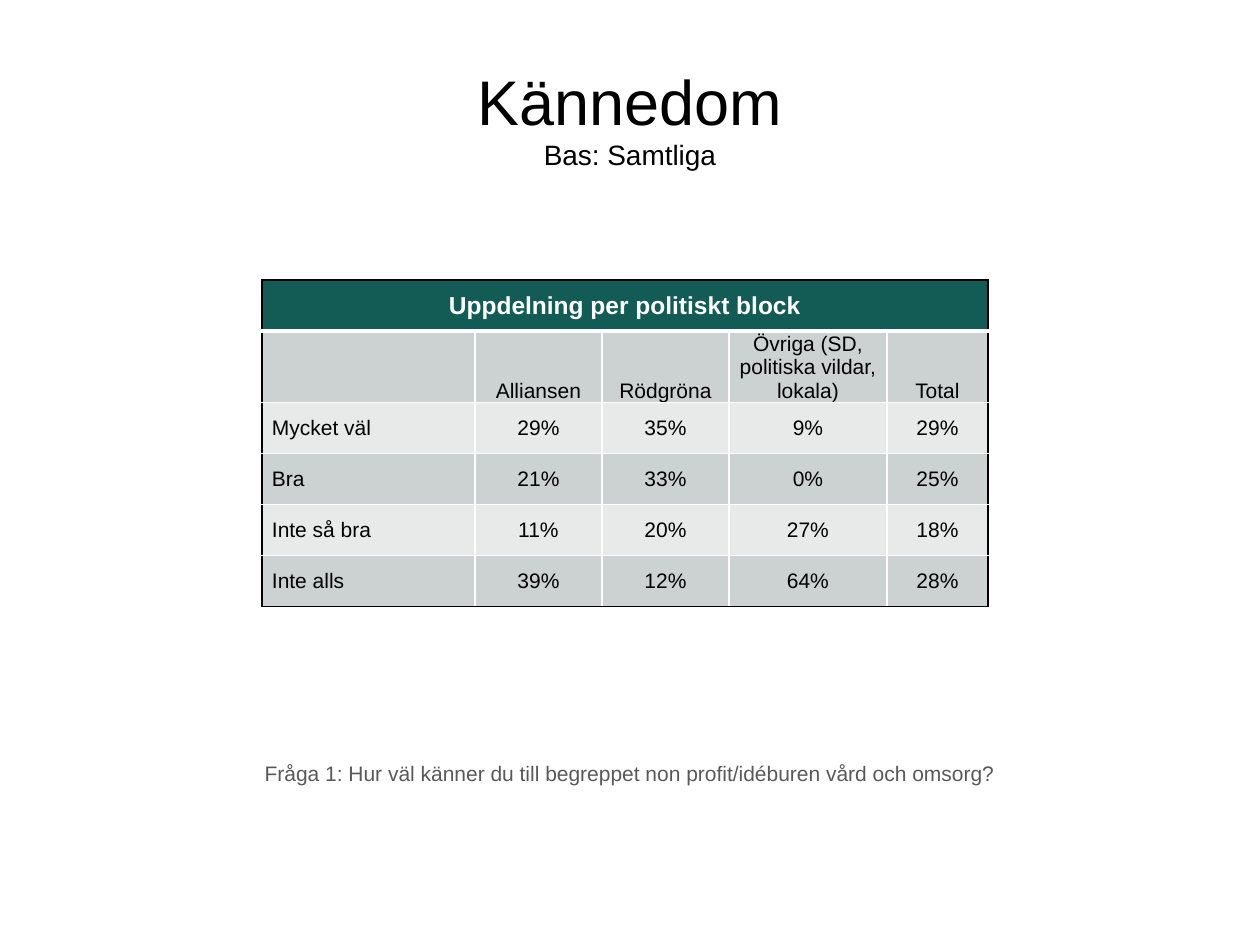
from copy import deepcopy
from dataclasses import dataclass

from lxml.etree import SubElement
from pptx import Presentation
from pptx.dml.color import RGBColor
from pptx.enum.text import MSO_ANCHOR as Anchor, PP_ALIGN as Align
from pptx.oxml.ns import qn
from pptx.util import Emu, Pt

DPI = 126


@dataclass(frozen=True)
class Theme:
    font: str = "Arial"
    black: str = "000000"
    white: str = "FFFFFF"
    grey: str = "595959"
    green: str = "135C55"
    dark: str = "CCD2D1"
    light: str = "E7EAE9"
    title: int = 36
    base: int = 16
    head: int = 14
    body: int = 12


T = Theme()
COLS = [213, 127, 127, 158, 101]
ROW = 51
HEAD = "Uppdelning per politiskt block"
ROWS = [
    ["", "Alliansen", "Rödgröna", "Övriga (SD, politiska vildar, lokala)", "Total"],
    ["Mycket väl", "29%", "35%", "9%", "29%"],
    ["Bra", "21%", "33%", "0%", "25%"],
    ["Inte så bra", "11%", "20%", "27%", "18%"],
    ["Inte alls", "39%", "12%", "64%", "28%"],
]


def px(n):
    return Emu(round(n * 914400 / DPI))


def rgb(code):
    return RGBColor.from_string(code)


def put(frame, text, size=T.body, color=T.black, bold=False, align=Align.CENTER):
    """Add a run to the first paragraph of a frame."""
    para = frame.paragraphs[0]
    para.alignment = align
    run = para.add_run()
    run.text = text
    font = run.font
    font.name, font.size, font.bold = T.font, Pt(size), bold
    font.color.rgb = rgb(color)
    return run


def place(shape, box):
    shape.left, shape.top, shape.width, shape.height = map(px, box)


def edge(cell, sides):
    """Draw cell borders from (tag, colour, width) triples, in schema order."""
    props = cell._tc.get_or_add_tcPr()
    for i, (tag, color, width) in enumerate(sides):
        line = SubElement(props, qn(f"a:{tag}"), w=str(Pt(width)))
        fill = SubElement(line, qn("a:solidFill"))
        SubElement(fill, qn("a:srgbClr"), val=color)
        props.insert(i, line)


def add_title(slide, box):
    shape = slide.shapes.title
    place(shape, box)
    frame = shape.text_frame
    frame.vertical_anchor = Anchor.MIDDLE
    run = put(frame, "Kännedom", size=T.title)
    para = frame.paragraphs[0]
    para.add_line_break()
    para._p[-1].append(deepcopy(run._r.rPr))
    put(frame, "Bas: Samtliga", size=T.base)


def style(cell, row, col):
    """Set the fill and borders that follow from a cell's place in the grid."""
    cell.fill.solid()
    band = T.dark if row % 2 else T.light
    cell.fill.fore_color.rgb = rgb(band if row else T.green)
    first, last = col == 0, col == len(COLS) - 1
    end = row == len(ROWS)
    edge(cell, [
        ("lnL", T.black if first else T.white, 1),
        ("lnR", T.black if last or row == 0 else T.white, 1),
        ("lnT", T.white if row else T.black, 3 if row == 1 else 1),
        ("lnB", T.black if end else T.white, 1 if row else 3),
    ])


def add_grid(slide, box):
    count = len(ROWS) + 1
    table = slide.shapes.add_table(count, len(COLS), *map(px, box)).table
    table.first_row = table.horz_banding = False
    for col, width in zip(table.columns, COLS):
        col.width = px(width)
    for row in table.rows:
        row.height = px(ROW)
    for r in range(count):
        for c in range(len(COLS)):
            style(table.cell(r, c), r, c)

    head = table.cell(0, 0)
    head.merge(table.cell(0, len(COLS) - 1))
    head.vertical_anchor = Anchor.MIDDLE
    put(head.text_frame, HEAD, size=T.head, color=T.white, bold=True)

    for r, line in enumerate(ROWS, 1):
        for c, text in enumerate(line):
            if not text:
                continue
            cell = table.cell(r, c)
            cell.vertical_anchor = Anchor.BOTTOM if r == 1 else Anchor.MIDDLE
            cell.margin_left = px(1 if c else 10)
            cell.margin_top = cell.margin_right = px(1)
            cell.margin_bottom = 0
            put(cell.text_frame, text, align=Align.CENTER if c else Align.LEFT)


def add_note(slide, box):
    frame = slide.shapes.add_textbox(*map(px, box)).text_frame
    frame.word_wrap = True
    put(frame, "Fråga 1: Hur väl känner du till begreppet non profit/idéburen "
        "vård och omsorg?", color=T.grey)


def main():
    deck = Presentation()
    deck.slide_width, deck.slide_height = px(1260), px(945)
    slide = deck.slides.add_slide(deck.slide_layouts[5])
    add_grid(slide, (262, 280, sum(COLS), 333))
    add_note(slide, (0, 754, 1260, 38))
    add_title(slide, (0, 38, 1260, 158))
    deck.save("out.pptx")


if __name__ == "__main__":
    main()
